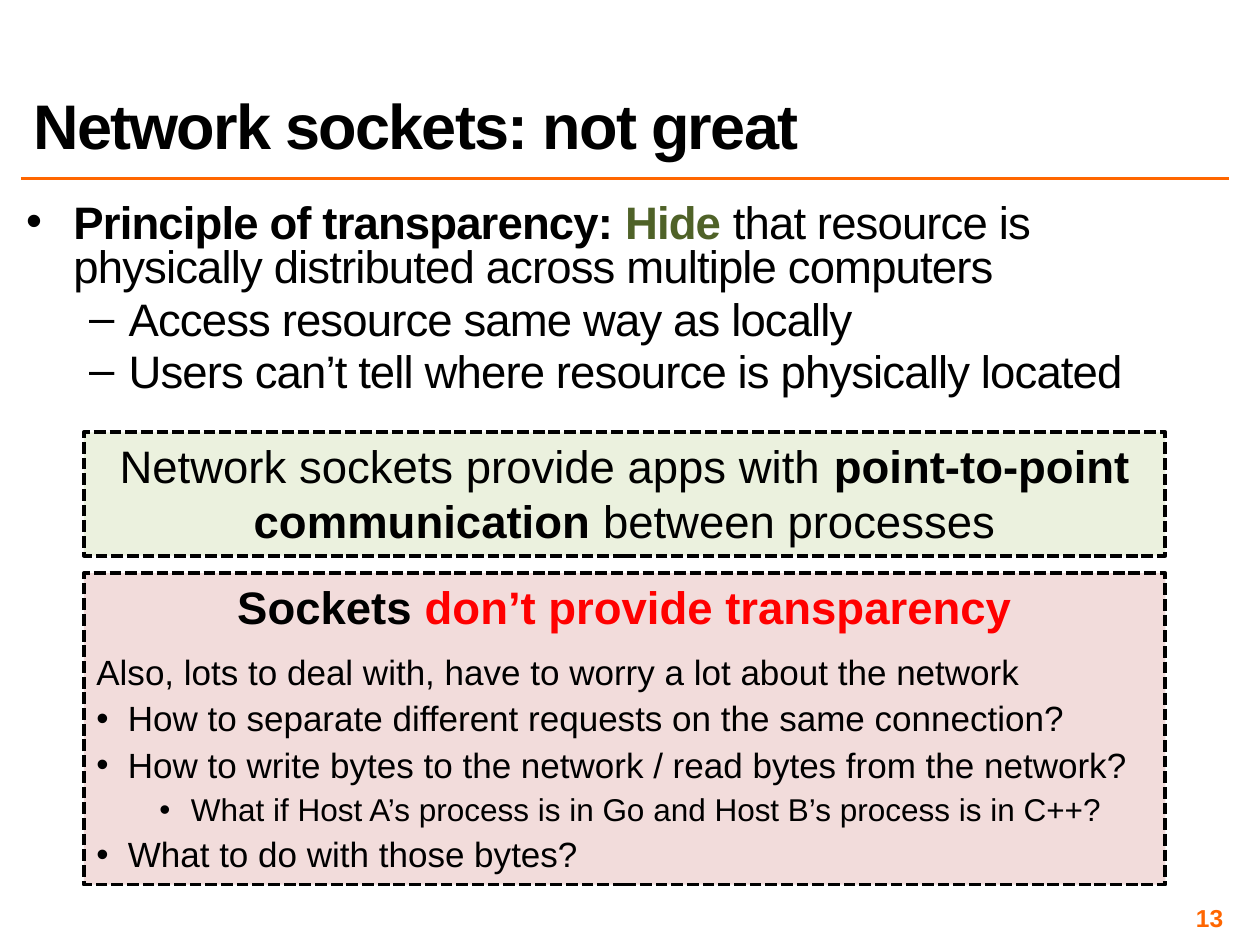
from lxml.etree import SubElement
from pptx import Presentation
from pptx.dml.color import RGBColor
from pptx.enum.dml import MSO_LINE
from pptx.enum.shapes import MSO_CONNECTOR, MSO_SHAPE
from pptx.enum.text import MSO_ANCHOR, PP_ALIGN
from pptx.oxml.ns import qn
from pptx.util import Pt

FONT = "Arial"
BLACK, ORANGE, RED, DARK_GREEN = "000000", "FF6600", "FF0000", "4F6228"
PALE_GREEN, PALE_RED = "EBF1DE", "F2DCDB"
MARGIN, CONTENT_WIDTH = 12, 690
BOX_LEFT, BOX_WIDTH = 48, 618


def color(value):
    return RGBColor.from_string(value)


def add_run(paragraph, text, size=26, fill=BLACK, bold=False, tracking=0):
    run = paragraph.add_run()
    run.text = text
    run.font.name = FONT
    run.font.size = Pt(size)
    run.font.bold = bold
    run.font.color.rgb = color(fill)
    if tracking:
        run.font._element.set("spc", str(round(tracking * 100)))


def add_paragraph(frame, *runs, align=PP_ALIGN.LEFT, level=0, spacing=1.0,
                  before=0, bullet=None, indent=0, hanging=0, **font):
    """Add a paragraph; each run is a text or a (text, format) pair."""
    first = frame.paragraphs[0]
    paragraph = frame.add_paragraph() if first.runs else first
    paragraph.alignment = align
    paragraph.level = level
    paragraph.line_spacing = spacing
    paragraph.space_before = Pt(before)
    if bullet:
        properties = paragraph._p.get_or_add_pPr()
        properties.set("marL", str(Pt(indent)))
        properties.set("indent", str(-Pt(hanging)))
        SubElement(properties, qn("a:buFont")).set("typeface", FONT)
        SubElement(properties, qn("a:buChar")).set("char", bullet)
    for run in runs:
        text, changes = (run, {}) if isinstance(run, str) else run
        add_run(paragraph, text, **{**font, **changes})


def add_text_box(slide, left, top, width, height, anchor=MSO_ANCHOR.TOP, inset=None):
    frame = slide.shapes.add_textbox(Pt(left), Pt(top), Pt(width), Pt(height)).text_frame
    frame.word_wrap = True
    frame.vertical_anchor = anchor
    if inset is not None:
        frame.margin_left = frame.margin_right = Pt(inset)
        frame.margin_top = frame.margin_bottom = Pt(inset)
    return frame


def add_dashed_box(slide, top, height, fill):
    shape = slide.shapes.add_shape(
        MSO_SHAPE.RECTANGLE, Pt(BOX_LEFT), Pt(top), Pt(BOX_WIDTH), Pt(height))
    shape.shadow.inherit = False
    shape.fill.solid()
    shape.fill.fore_color.rgb = color(fill)
    shape.line.color.rgb = color(BLACK)
    shape.line.width = Pt(2.25)
    shape.line.dash_style = MSO_LINE.SQUARE_DOT
    shape.text_frame.word_wrap = True
    shape.text_frame.vertical_anchor = MSO_ANCHOR.TOP
    return shape.text_frame


def add_rule(slide, top):
    line = slide.shapes.add_connector(
        MSO_CONNECTOR.STRAIGHT, Pt(MARGIN), Pt(top), Pt(MARGIN + CONTENT_WIDTH), Pt(top))
    line.line.color.rgb = color(ORANGE)
    line.line.width = Pt(2)
    SubElement(line._element.spPr, qn("a:effectLst"))


def main():
    presentation = Presentation()
    presentation.slide_width, presentation.slide_height = Pt(720), Pt(540)
    slide = presentation.slides.add_slide(presentation.slide_layouts[6])

    # Title and rule
    add_rule(slide, 102)
    title = add_text_box(slide, MARGIN, 12, CONTENT_WIDTH, 84, MSO_ANCHOR.BOTTOM)
    add_paragraph(title, "Network sockets: not great",
                  spacing=0.8, size=36, bold=True, tracking=-1)

    # Principle of transparency
    body = add_text_box(slide, MARGIN, 114, CONTENT_WIDTH, 372, inset=3)
    body_format = dict(spacing=0.8, before=5.2, tracking=-0.5)
    add_paragraph(body,
                  ("Principle of transparency: ", dict(bold=True)),
                  ("Hide ", dict(bold=True, fill=DARK_GREEN)),
                  "that resource is physically distributed across multiple computers",
                  bullet="•", indent=27, hanging=27, **body_format)
    for text in ("Access resource same way as locally",
                 "Users can’t tell where resource is physically located"):
        add_paragraph(body, text, level=1, bullet="–", indent=58.5, hanging=22.5,
                      **body_format)

    # What sockets provide
    provided = add_dashed_box(slide, 247, 70.5, PALE_GREEN)
    add_paragraph(provided, "Network sockets provide apps with ",
                  ("point-to-point communication", dict(bold=True)),
                  " between processes", align=PP_ALIGN.CENTER)

    # What sockets lack
    lacking = add_dashed_box(slide, 327.5, 178, PALE_RED)
    add_paragraph(lacking, "Sockets ", ("don’t provide transparency", dict(fill=RED)),
                  align=PP_ALIGN.CENTER, bold=True)
    add_paragraph(lacking, "Also, lots to deal with, have to worry a lot about the network",
                  spacing=0.9, before=12, size=20)
    questions = [
        (0, "How to separate different requests on the same connection?"),
        (0, "How to write bytes to the network / read bytes from the network?"),
        (1, "What if Host A’s process is in Go and Host B’s process is in C++?"),
        (0, "What to do with those bytes?"),
    ]
    for level, text in questions:
        add_paragraph(lacking, text, level=level, spacing=0.9, before=5, bullet="•",
                      indent=18 + 36 * level, hanging=18, size=20 - 2 * level)

    # Page number
    number = add_text_box(slide, 534, 516, 168, 16.5, MSO_ANCHOR.MIDDLE, inset=3)
    add_paragraph(number, "13", align=PP_ALIGN.RIGHT, size=14, fill=ORANGE, bold=True)

    presentation.save("out.pptx")


if __name__ == "__main__":
    main()
